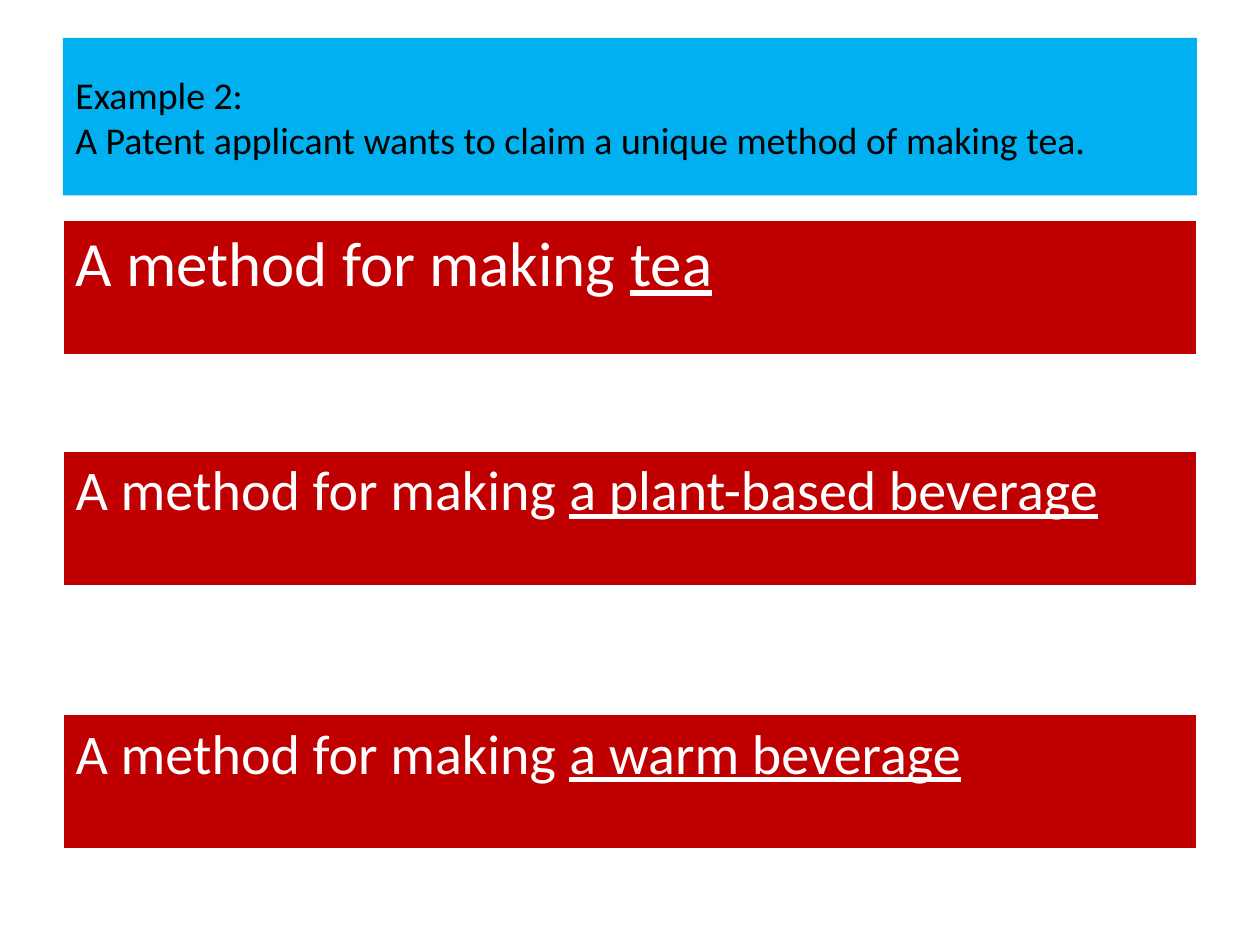
from lxml.etree import SubElement
from pptx import Presentation
from pptx.dml.color import RGBColor
from pptx.enum.shapes import MSO_SHAPE
from pptx.enum.text import MSO_ANCHOR, PP_ALIGN
from pptx.oxml.ns import qn
from pptx.util import Inches, Pt

COLORS = {"blue": "00B0F0", "red": "C00000", "white": "FFFFFF", "black": "000000"}
LEFT, WIDTH = 0.5, 9
LEAD = "A method for making "
CLAIMS = [
    (1.75, "tea", 36),
    (3.58, "a plant-based beverage", 32),
    (5.67, "a warm beverage", 32),
]


def rgb(name):
    return RGBColor.from_string(COLORS[name])


def write(para, text, size=32, color="white", font="Calibri", under=None):
    """Add a run of text to a left-aligned paragraph."""
    para.alignment = PP_ALIGN.LEFT
    run = para.add_run()
    run.text = text
    run.font.name = font
    run.font.size = Pt(size)
    run.font.underline = under
    run.font.color.rgb = rgb(color)


def edge(cell, side, width, color):
    """Draw one cell border; call before the cell is filled."""
    props = cell._tc.get_or_add_tcPr()
    line = SubElement(props, qn(f"a:ln{side}"), w=str(Pt(width)))
    fill = SubElement(line, qn("a:solidFill"))
    SubElement(fill, qn("a:srgbClr"), val=COLORS[color])


class Deck:
    def __init__(self):
        self.show = Presentation()
        self.show.slide_width = Inches(10)
        self.show.slide_height = Inches(7.5)
        self.slide = self.show.slides.add_slide(self.show.slide_layouts[6])

    def banner(self, lines, top, height):
        box = self.slide.shapes.add_shape(
            MSO_SHAPE.RECTANGLE, Inches(LEFT), Inches(top), Inches(WIDTH), Inches(height))
        box.shadow.inherit = False
        box.fill.solid()
        box.fill.fore_color.rgb = rgb("blue")
        box.line.fill.background()
        frame = box.text_frame
        frame.word_wrap = True
        frame.vertical_anchor = MSO_ANCHOR.MIDDLE
        para = frame.paragraphs[0]
        for i, line in enumerate(lines):
            if i:
                para.add_line_break()
            write(para, line, size=21.6, color="black")

    def claim(self, top, term, size, height=1.08):
        """Add a one-cell table whose claimed term is underlined."""
        table = self.slide.shapes.add_table(
            1, 1, Inches(LEFT), Inches(top), Inches(WIDTH), Inches(height)).table
        table.first_row = table.horz_banding = False
        cell = table.cell(0, 0)
        for side, width in zip("LRTB", (1, 1, 1, 3)):
            edge(cell, side, width, "white")
        cell.fill.solid()
        cell.fill.fore_color.rgb = rgb("red")
        para = cell.text_frame.paragraphs[0]
        write(para, LEAD, size=size)
        write(para, term, size=size, under=True)


def main():
    deck = Deck()
    deck.banner(["Example 2:", "A Patent applicant wants to claim a unique method of making tea."],
                top=0.3, height=1.25)
    for top, term, size in CLAIMS:
        deck.claim(top, term, size)
    deck.show.save("out.pptx")


if __name__ == "__main__":
    main()
